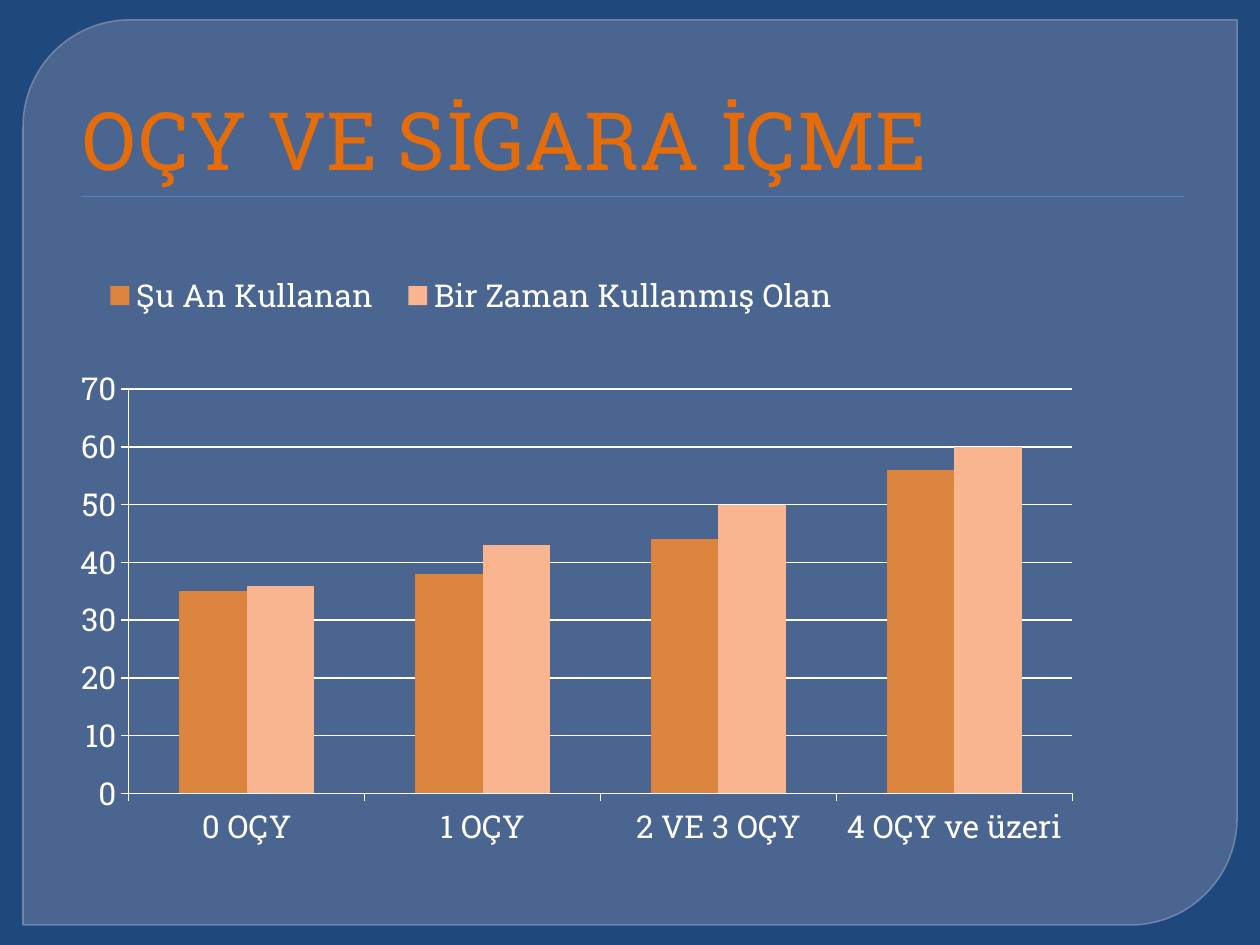
"""Build a slide with a clustered column chart of smoking by OÇY score."""
from lxml import etree
from pptx import Presentation
from pptx.chart.data import CategoryChartData
from pptx.dml.color import RGBColor
from pptx.enum.chart import XL_CHART_TYPE, XL_LEGEND_POSITION, XL_TICK_MARK
from pptx.enum.shapes import MSO_SHAPE
from pptx.enum.text import MSO_ANCHOR, MSO_AUTO_SIZE, PP_ALIGN
from pptx.oxml.ns import qn
from pptx.util import Pt

COLUMNS = XL_CHART_TYPE.COLUMN_CLUSTERED
TOP = XL_LEGEND_POSITION.TOP
OUTSIDE = XL_TICK_MARK.OUTSIDE
PANEL, RECT = MSO_SHAPE.ROUND_2_DIAG_RECTANGLE, MSO_SHAPE.RECTANGLE

TITLE = "OÇY VE SİGARA İÇME"
CATEGORIES = ["0 OÇY", "1 OÇY", "2 VE 3 OÇY", "4 OÇY ve üzeri"]
SERIES = [
    ("Şu An Kullanan", [35, 38, 44, 56], "current"),
    ("Bir Zaman Kullanmış Olan", [36, 43, 50, 60], "ever"),
]
COLORS = {
    "background": "1F497D", "panel": "63759D", "edge": "7989B3",
    "rule": "4F81BD", "title": "E46C0A", "text": "FFFFFF",
    "current": "DB843D", "ever": "F9B590",
}
FONT = "Roboto Slab"
PLOT_LAYOUT = (0.058, 0.26, 0.832, 0.648)
LEGEND_LAYOUT = (0.02, 0.06, 0.68, 0.1)
SCALE = 914400 / 126


def px(*lengths):
    return [round(n * SCALE) for n in lengths]


def rgb(name):
    return RGBColor.from_string(COLORS[name])


def set_alpha(fill_parent, percent):
    color = fill_parent.find(qn("a:solidFill"))[0]
    etree.SubElement(color, qn("a:alpha"), val=str(percent * 1000))


def add_block(s, kind, box, color):
    sp = s.shapes.add_shape(kind, *px(*box))
    sp.shadow.inherit = False
    sp.fill.solid()
    sp.fill.fore_color.rgb = rgb(color)
    sp.line.fill.background()
    return sp


def write(tf, text, size, color):
    p = tf.paragraphs[0]
    p.alignment = PP_ALIGN.LEFT
    r = p.add_run()
    r.text = text
    style_font(r.font, size, color)


def style_font(font, size, color):
    font.name, font.size, font.bold = FONT, Pt(size), False
    font.color.rgb = rgb(color)


def set_layout(element, box, inner=False):
    for old in element.findall(qn("c:layout")):
        element.remove(old)
    layout = etree.Element(qn("c:layout"))
    manual = etree.SubElement(layout, qn("c:manualLayout"))
    values = [("layoutTarget", "inner")] if inner else []
    values += [("xMode", "edge"), ("yMode", "edge"), *zip("xywh", box)]
    for tag, value in values:
        etree.SubElement(manual, qn(f"c:{tag}"), val=str(value))
    element.insert(0 if inner else 1, layout)


def add_column_chart(s, box):
    data = CategoryChartData()
    data.categories = CATEGORIES
    for name, values, _ in SERIES:
        data.add_series(name, values)
    chart = s.shapes.add_chart(COLUMNS, *px(*box), data).chart
    style_font(chart.font, 18, "text")
    chart.has_title = False
    plot = chart.plots[0]
    plot.gap_width, plot.overlap, plot.vary_by_categories = 150, 0, False
    for series, (_, _, color) in zip(plot.series, SERIES):
        series.format.fill.solid()
        series.format.fill.fore_color.rgb = rgb(color)
    chart.has_legend = True
    chart.legend.position = TOP
    chart.legend.include_in_layout = False
    value_axis = chart.value_axis
    value_axis.minimum_scale, value_axis.maximum_scale = 0, 70
    value_axis.major_unit = 10
    value_axis.has_major_gridlines = True
    for axis in (chart.category_axis, value_axis):
        axis.major_tick_mark = OUTSIDE
    for part in (chart.category_axis, value_axis, value_axis.major_gridlines):
        part.format.line.color.rgb = rgb("text")
        part.format.line.width = Pt(0.75)
    chart_area = chart.legend._element.getparent()
    set_layout(chart_area.find(qn("c:plotArea")), PLOT_LAYOUT, inner=True)
    set_layout(chart_area.find(qn("c:legend")), LEGEND_LAYOUT)


def main():
    prs = Presentation()
    prs.slide_width, prs.slide_height = px(1260, 945)
    s = prs.slides.add_slide(prs.slide_layouts[5])
    s.background.fill.solid()
    s.background.fill.fore_color.rgb = rgb("background")

    panel = add_block(s, PANEL, (23, 20, 1214, 905), "panel")
    panel.adjustments[0], panel.adjustments[1] = 0.118, 0
    set_alpha(panel.element.spPr, 65)
    panel.line.color.rgb = rgb("edge")
    panel.line.width = Pt(0.87)
    set_alpha(panel.element.spPr.find(qn("a:ln")), 88)
    add_block(s, RECT, (81, 196, 1103, 1), "rule")

    title = s.shapes.title
    title.element.getparent().append(title.element)
    title.left, title.top, title.width, title.height = px(63, 35, 1134, 158)
    tf = title.text_frame
    tf.word_wrap, tf.auto_size = True, MSO_AUTO_SIZE.NONE
    tf.vertical_anchor = MSO_ANCHOR.BOTTOM
    tf.margin_left = px(20)[0]
    write(tf, TITLE, 46, "title")

    add_column_chart(s, (63, 227, 1134, 624))
    prs.save("out.pptx")


if __name__ == "__main__":
    main()
